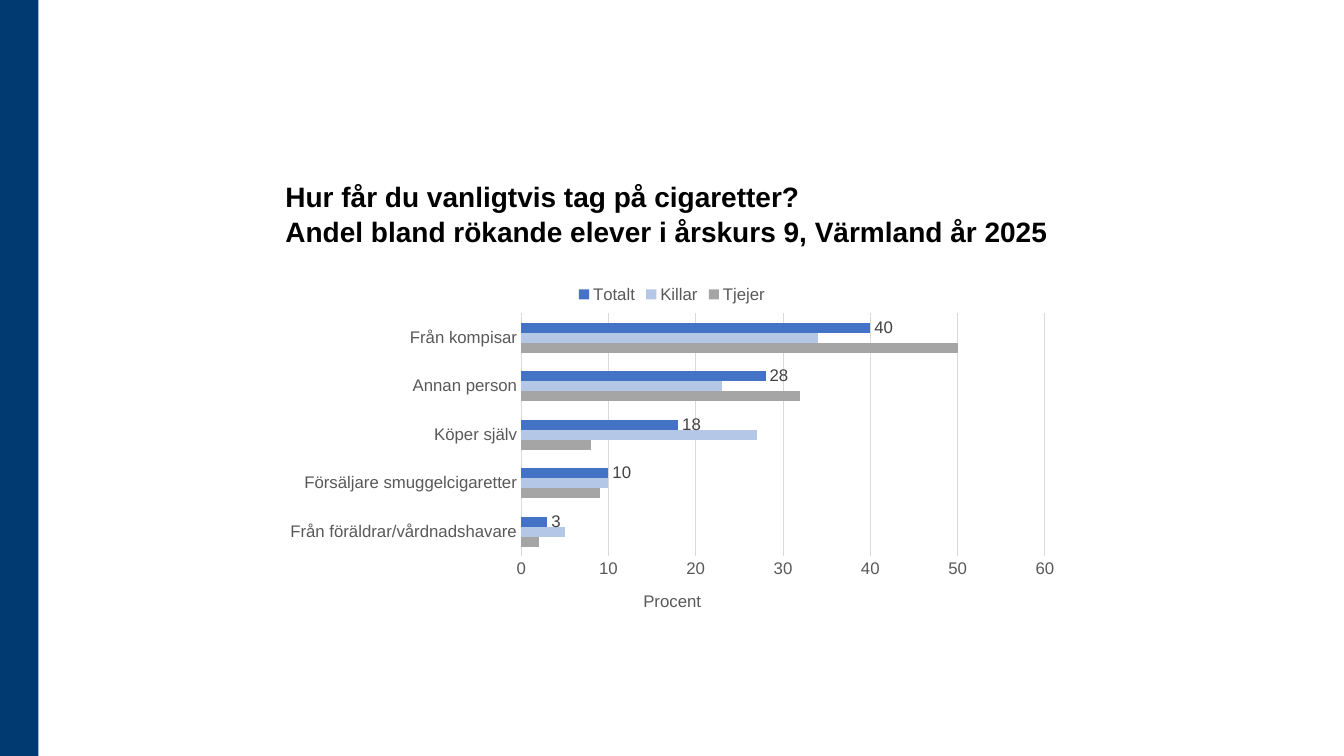
from lxml.etree import SubElement
from pptx import Presentation
from pptx.chart.data import CategoryChartData as Data
from pptx.dml.color import RGBColor as RGB
from pptx.enum.chart import XL_CHART_TYPE as Kind
from pptx.enum.chart import XL_LABEL_POSITION as Spot
from pptx.enum.chart import XL_LEGEND_POSITION as Side
from pptx.enum.chart import XL_TICK_MARK as Tick
from pptx.enum.shapes import MSO_SHAPE as Shape
from pptx.enum.text import MSO_ANCHOR as Anchor, PP_ALIGN as Align
from pptx.oxml.ns import qn
from pptx.util import Inches, Pt

NAVY = RGB(0x00, 0x3A, 0x70)
BLACK = RGB(0x00, 0x00, 0x00)
DARK = RGB(0x40, 0x40, 0x40)
GREY = RGB(0x59, 0x59, 0x59)
PALE = RGB(0xD9, 0xD9, 0xD9)
FACE = "Arial"

# Content
LINES = ["Hur får du vanligtvis tag på cigaretter?",
         "Andel bland rökande elever i årskurs 9, Värmland år 2025"]
UNIT = "Procent"
CATS = ["Från föräldrar/vårdnadshavare", "Försäljare smuggelcigaretter",
        "Köper själv", "Annan person", "Från kompisar"]
SERIES = [("Tjejer", (2, 9, 8, 32, 50), RGB(0xA5, 0xA5, 0xA5)),
          ("Killar", (5, 10, 27, 23, 34), RGB(0xB4, 0xC7, 0xE7)),
          ("Totalt", (3, 10, 18, 28, 40), RGB(0x44, 0x72, 0xC4))]

# Slide and its centred column
WIDE, HIGH = Inches(13.33), Inches(7.5)
COL = Inches(7.87)
LEFT = (WIDE - COL) // 2


def style(font, size, color, bold=False):
    font.name, font.size, font.bold = FACE, Pt(size), bold
    font.color.rgb = color


def place(node, **share):
    """Set a manual layout, as shares of the chart's size."""
    for old in node.findall(qn("c:layout")):
        node.remove(old)
    lay = SubElement(node, qn("c:layout"))
    man = SubElement(lay, qn("c:manualLayout"))
    if "w" in share:
        SubElement(man, qn("c:layoutTarget")).set("val", "inner")
    for key in "xy":
        SubElement(man, qn(f"c:{key}Mode")).set("val", "edge")
    for key, val in share.items():
        SubElement(man, qn(f"c:{key}")).set("val", str(val))
    # The layout comes first in a plot area, after the text in a title
    text = node.find(qn("c:tx"))
    node.insert(0 if text is None else 1, lay)


def add_bar(slide):
    bar = slide.shapes.add_shape(Shape.RECTANGLE, 0, 0, Inches(0.38), HIGH)
    bar.shadow.inherit = False
    bar.fill.solid()
    bar.fill.fore_color.rgb = NAVY
    bar.line.fill.background()


def add_title(slide):
    title = slide.shapes.title
    title.left, title.top = LEFT, Inches(1.06)
    title.width, title.height = COL, Inches(1.45)
    frame = title.text_frame
    frame.word_wrap = True
    frame.vertical_anchor = Anchor.BOTTOM
    para = frame.paragraphs[0]
    para.alignment, para.line_spacing = Align.LEFT, 1.05
    for i, line in enumerate(LINES):
        if i:
            para.add_line_break()
        run = para.add_run()
        run.text = line
        style(run.font, 20, BLACK, True)


def add_chart(slide):
    data = Data(number_format="0")
    data.categories = CATS
    for name, vals, _ in SERIES:
        data.add_series(name, vals)
    chart = slide.shapes.add_chart(Kind.BAR_CLUSTERED, LEFT, Inches(2.72),
                                   COL, Inches(3.54), data).chart
    style(chart.font, 12, BLACK)
    chart.has_title = False

    # Bars
    plot = chart.plots[0]
    plot.gap_width, plot.overlap = 182, 0
    plot.vary_by_categories = False
    for bars, (_, _, color) in zip(plot.series, SERIES):
        bars.format.fill.solid()
        bars.format.fill.fore_color.rgb = color
    tags = plot.series[-1].data_labels
    tags.show_value, tags.position = True, Spot.OUTSIDE_END
    tags.number_format, tags.number_format_is_linked = "0", False
    style(tags.font, 12, DARK)

    # Axes
    cat, val = chart.category_axis, chart.value_axis
    for axis in (cat, val):
        axis.major_tick_mark = axis.minor_tick_mark = Tick.NONE
        style(axis.tick_labels.font, 12, GREY)
    cat.has_major_gridlines, val.has_major_gridlines = False, True
    for line in (cat.format.line, val.major_gridlines.format.line):
        line.color.rgb, line.width = PALE, Pt(0.75)
    val.format.line.fill.background()
    val.minimum_scale, val.maximum_scale, val.major_unit = 0, 60, 10
    val.tick_labels.number_format = "0"
    val.tick_labels.number_format_is_linked = False
    run = val.axis_title.text_frame.paragraphs[0].add_run()
    run.text = UNIT
    style(run.font, 12, GREY)

    # Legend
    chart.has_legend = True
    chart.legend.position = Side.TOP
    chart.legend.include_in_layout = False
    style(chart.legend.font, 12, GREY)

    # Layout
    area = chart.element.find(".//" + qn("c:plotArea"))
    place(area, x=0.31, y=0.11, w=0.66, h=0.68)
    place(area.find(".//" + qn("c:title")), x=0.46, y=0.88)


def main():
    deck = Presentation()
    deck.slide_width, deck.slide_height = WIDE, HIGH
    slide = deck.slides.add_slide(deck.slide_layouts[5])
    add_bar(slide)
    add_title(slide)
    add_chart(slide)
    deck.save("out.pptx")


if __name__ == "__main__":
    main()
